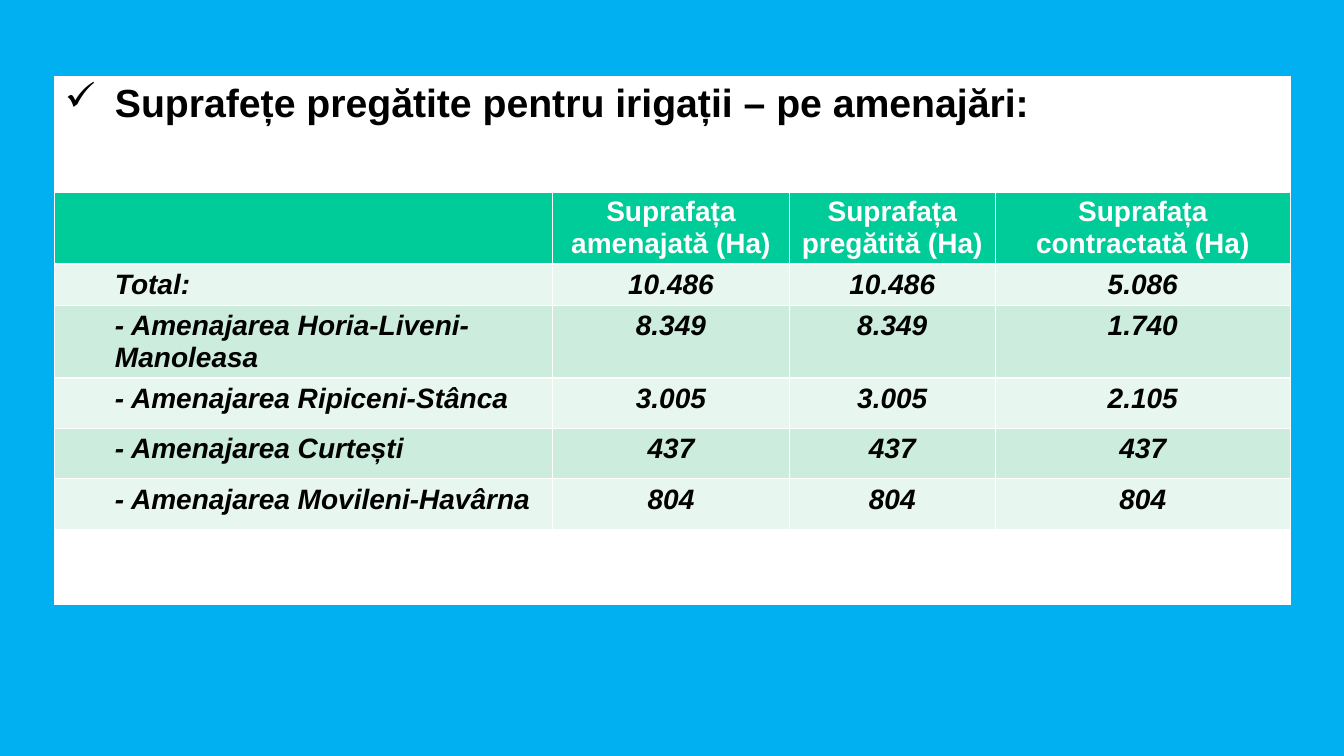
from lxml import etree
from pptx import Presentation
from pptx.dml.color import RGBColor
from pptx.enum.text import PP_ALIGN
from pptx.oxml.ns import qn
from pptx.util import Inches, Pt

CENTER, LEFT = PP_ALIGN.CENTER, PP_ALIGN.LEFT

SKY = RGBColor(0x00, 0xB0, 0xF0)
GREEN = RGBColor(0x00, 0xCC, 0x99)
PALE = RGBColor(0xE7, 0xF6, 0xEF)
MINT = RGBColor(0xCC, 0xEC, 0xDE)
WHITE = RGBColor(0xFF, 0xFF, 0xFF)
BLACK = RGBColor(0x00, 0x00, 0x00)

FONT = "Arial"
INDENT = Inches(0.5)
COLUMN_WIDTHS = (4.94, 2.35, 2.04, 2.93)
ROW_HEIGHTS = (1.14, 0.57, 0.4, 0.5, 0.5, 0.5, 0.5, 0.75)

TITLE = "Suprafețe pregătite pentru irigații – pe amenajări:"
HEADERS = ("", "Suprafața amenajată (Ha)", "Suprafața pregătită (Ha)",
           "Suprafața contractată (Ha)")
AREAS = (
    ("Total:", "10.486", "10.486", "5.086"),
    ("- Amenajarea Horia-Liveni-Manoleasa", "8.349", "8.349", "1.740"),
    ("- Amenajarea Ripiceni-Stânca", "3.005", "3.005", "2.105"),
    ("- Amenajarea Curtești", "437", "437", "437"),
    ("- Amenajarea Movileni-Havârna", "804", "804", "804"),
)


def set_borders(cell, bottom=1):
    """White borders, one point wide except for the bottom one."""
    properties = cell._tc.get_or_add_tcPr()
    widths = (("a:lnL", 1), ("a:lnR", 1), ("a:lnT", 1), ("a:lnB", bottom))
    for position, (side, width) in enumerate(widths):
        line = etree.Element(qn(side), w=str(Pt(width)))
        fill = etree.SubElement(line, qn("a:solidFill"))
        etree.SubElement(fill, qn("a:srgbClr"), val=str(WHITE))
        properties.insert(position, line)


def paint_cell(cell, color, bottom=1):
    cell.fill.solid()
    cell.fill.fore_color.rgb = color
    set_borders(cell, bottom)


def write_cell(cell, text, color, size=20, align=CENTER, italic=False):
    para = cell.text_frame.paragraphs[0]
    para.text = text
    para.alignment = align
    for span in para.runs:
        span.font.name = FONT
        span.font.size = Pt(size)
        span.font.bold = True
        span.font.italic = italic
        span.font.color.rgb = color
    return para


def add_check_bullet(para):
    properties = para._p.get_or_add_pPr()
    properties.set("marL", str(INDENT))
    properties.set("indent", str(-INDENT))
    etree.SubElement(properties, qn("a:buFont"), typeface="Wingdings")
    etree.SubElement(properties, qn("a:buChar"), char="ü")


def add_area_table(page):
    frame = page.shapes.add_table(
        len(ROW_HEIGHTS), len(COLUMN_WIDTHS), Inches(0.54), Inches(0.76),
        Inches(sum(COLUMN_WIDTHS)), Inches(sum(ROW_HEIGHTS)))
    table = frame.table
    for column, width in zip(table.columns, COLUMN_WIDTHS):
        column.width = Inches(width)
    for row, height in zip(table.rows, ROW_HEIGHTS):
        row.height = Inches(height)
    return table


def fill_full_row(table, row, bottom=1):
    """Merge one row across the table and return its cell."""
    last = len(COLUMN_WIDTHS) - 1
    table.cell(row, 0).merge(table.cell(row, last))
    for column in range(last + 1):
        paint_cell(table.cell(row, column), WHITE, bottom)
    return table.cell(row, 0)


def fill_header(table):
    for column, text in enumerate(HEADERS):
        cell = table.cell(1, column)
        paint_cell(cell, GREEN)
        write_cell(cell, text, WHITE)


def fill_areas(table):
    for index, values in enumerate(AREAS):
        for column, text in enumerate(values):
            cell = table.cell(index + 2, column)
            paint_cell(cell, MINT if index % 2 else PALE)
            align = CENTER if column else LEFT
            para = write_cell(cell, text, BLACK, align=align, italic=True)
            if column == 0:
                para.level = 1
                properties = para._p.get_or_add_pPr()
                properties.set("marL", str(INDENT))
                properties.set("indent", "0")


def main():
    deck = Presentation()
    deck.slide_width, deck.slide_height = Inches(13.33), Inches(7.5)
    page = deck.slides.add_slide(deck.slide_layouts[6])
    page.background.fill.solid()
    page.background.fill.fore_color.rgb = SKY

    table = add_area_table(page)
    title_cell = fill_full_row(table, 0, bottom=3)
    add_check_bullet(write_cell(title_cell, TITLE, BLACK, 28, LEFT))
    fill_header(table)
    fill_areas(table)
    fill_full_row(table, len(ROW_HEIGHTS) - 1)
    deck.save("out.pptx")


if __name__ == "__main__":
    main()
